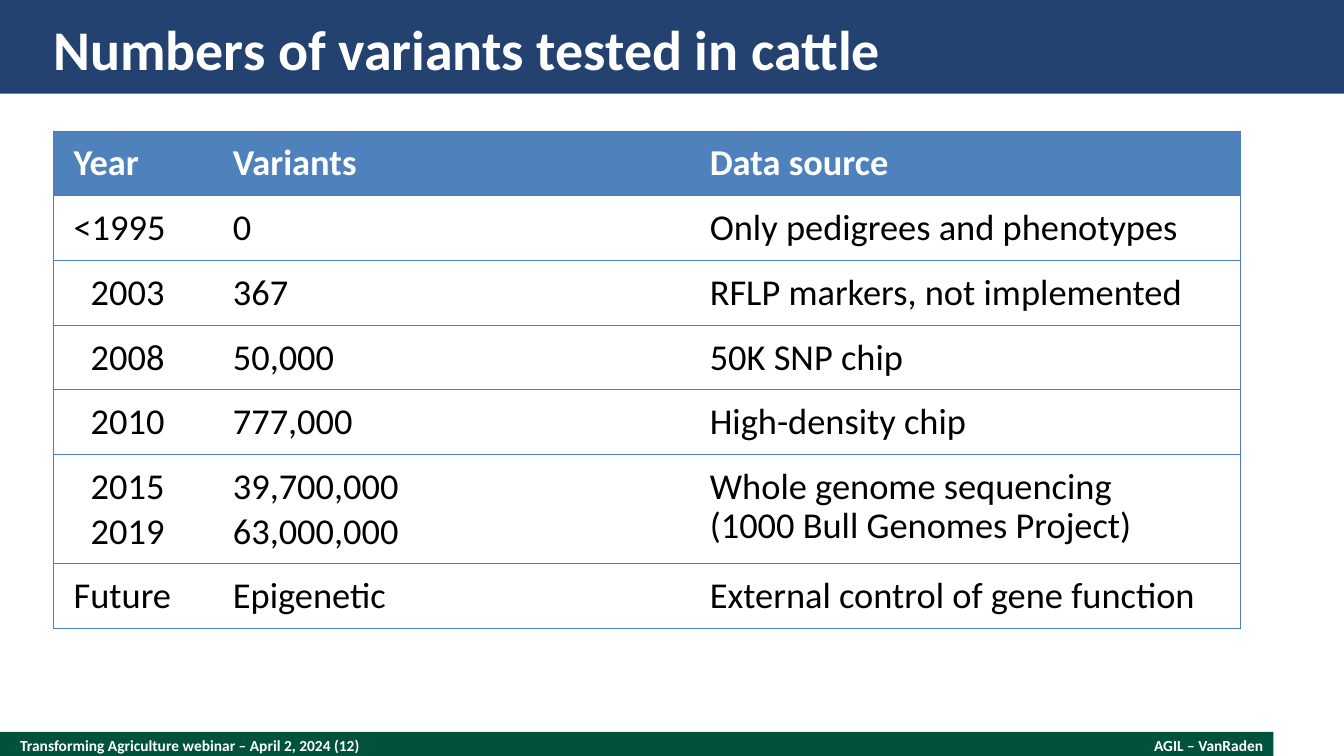
from lxml import etree
from pptx import Presentation
from pptx.dml.color import RGBColor
from pptx.enum.shapes import MSO_SHAPE
from pptx.enum.text import MSO_ANCHOR, PP_ALIGN
from pptx.oxml.ns import qn
from pptx.util import Inches, Pt

RECTANGLE = MSO_SHAPE.RECTANGLE
MIDDLE = MSO_ANCHOR.MIDDLE
LEFT, RIGHT = PP_ALIGN.LEFT, PP_ALIGN.RIGHT

NAVY = RGBColor(0x24, 0x42, 0x70)
GREEN = RGBColor(0x00, 0x52, 0x3C)
HEADER_BLUE = RGBColor(0x4F, 0x81, 0xBD)
RULE_BLUE = RGBColor(0x4B, 0x7E, 0xBC)
WHITE = RGBColor(0xFF, 0xFF, 0xFF)
BLACK = RGBColor(0x00, 0x00, 0x00)

FONT = "Calibri"
COLUMN_WIDTHS = [1.58, 4.73, 5.46]
LINE_HEIGHT, CELL_PADDING = 0.44, 0.2
YEAR_INDENT = 0.17
ROWS = [
    ["Year", "Variants", "Data source"],
    ["<1995", "0", "Only pedigrees and phenotypes"],
    ["2003", "367", "RFLP markers, not implemented"],
    ["2008", "50,000", "50K SNP chip"],
    ["2010", "777,000", "High-density chip"],
    ["2015\n2019", "39,700,000\n63,000,000",
     "Whole genome sequencing\n(1000 Bull Genomes Project)"],
    ["Future", "Epigenetic", "External control of gene function"],
]


def add_text(paragraph, text, size, color, bold):
    run = paragraph.add_run()
    run.text = text
    run.font.name = FONT
    run.font.size = Pt(size)
    run.font.bold = bold
    run.font.color.rgb = color


def set_frame(frame):
    """Centre the text vertically, without margins."""
    frame.margin_left = frame.margin_right = 0
    frame.margin_top = frame.margin_bottom = 0
    frame.vertical_anchor = MIDDLE
    frame.word_wrap = True


prs = Presentation()
prs.slide_width, prs.slide_height = Inches(13.33), Inches(7.5)
slide = prs.slides.add_slide(prs.slide_layouts[5])
shapes = slide.shapes

# Bands and footer
for top, width, height, color in [(7.26, 12.63, 0.27, GREEN), (0, 13.33, 0.93, NAVY)]:
    band = shapes.add_shape(RECTANGLE, 0, Inches(top), Inches(width), Inches(height))
    band.shadow.inherit = False
    band.fill.solid()
    band.fill.fore_color.rgb = color
    band.line.fill.background()

for left, top, width, height, align, text in [
    (0.2, 7.26, 8.67, 0.27, LEFT, "Transforming Agriculture webinar – April 2, 2024 (12)"),
    (9.6, 7.3, 2.93, 0.19, RIGHT, "AGIL – VanRaden"),
]:
    footer = shapes.add_textbox(Inches(left), Inches(top), Inches(width), Inches(height))
    set_frame(footer.text_frame)
    paragraph = footer.text_frame.paragraphs[0]
    paragraph.alignment = align
    add_text(paragraph, text, 11, WHITE, True)

# Title, brought in front of its band
title = shapes.title
title.left, title.top = Inches(0.53), Inches(0.13)
title.width, title.height = Inches(12.27), Inches(0.7)
set_frame(title.text_frame)
paragraph = title.text_frame.paragraphs[0]
paragraph.alignment = LEFT
add_text(paragraph, "Numbers of variants tested in cattle", 40, WHITE, True)
band.element.getparent().append(title.element)

# Table of variants
row_heights = [CELL_PADDING + LINE_HEIGHT * (row[0].count("\n") + 1) for row in ROWS]
table = shapes.add_table(
    len(ROWS), len(COLUMN_WIDTHS), Inches(0.53), Inches(1.3),
    Inches(sum(COLUMN_WIDTHS)), Inches(sum(row_heights)),
).table
table.horz_banding = False
for column, width in zip(table.columns, COLUMN_WIDTHS):
    column.width = Inches(width)

for r, (row, height) in enumerate(zip(ROWS, row_heights)):
    table.rows[r].height = Inches(height)
    is_header = r == 0
    for c, text in enumerate(row):
        cell = table.cell(r, c)
        cell.margin_left = cell.margin_right = Inches(0.2)
        cell.margin_top = cell.margin_bottom = Inches(0.1)

        # Horizontal rules everywhere, vertical ones only at the outer edges
        ruled = {"lnL": c == 0, "lnR": c == len(row) - 1, "lnT": True, "lnB": True}
        properties = cell._tc.get_or_add_tcPr()
        for side, visible in ruled.items():
            border = etree.SubElement(properties, qn(f"a:{side}"), w=str(Pt(0.75)))
            if visible:
                fill = etree.SubElement(border, qn("a:solidFill"))
                etree.SubElement(fill, qn("a:srgbClr"), val=str(RULE_BLUE))
            else:
                etree.SubElement(border, qn("a:noFill"))

        if is_header:
            cell.fill.solid()
            cell.fill.fore_color.rgb = HEADER_BLUE
        else:
            cell.fill.background()

        for i, line in enumerate(text.split("\n")):
            frame = cell.text_frame
            paragraph = frame.add_paragraph() if i else frame.paragraphs[0]
            if c == 0 and line.isdigit():
                paragraph._p.get_or_add_pPr().set("marL", str(Inches(YEAR_INDENT)))
            if line.startswith("("):
                paragraph.line_spacing = Pt(28)
            add_text(paragraph, line, 26, WHITE if is_header else BLACK, is_header)

prs.save("out.pptx")
